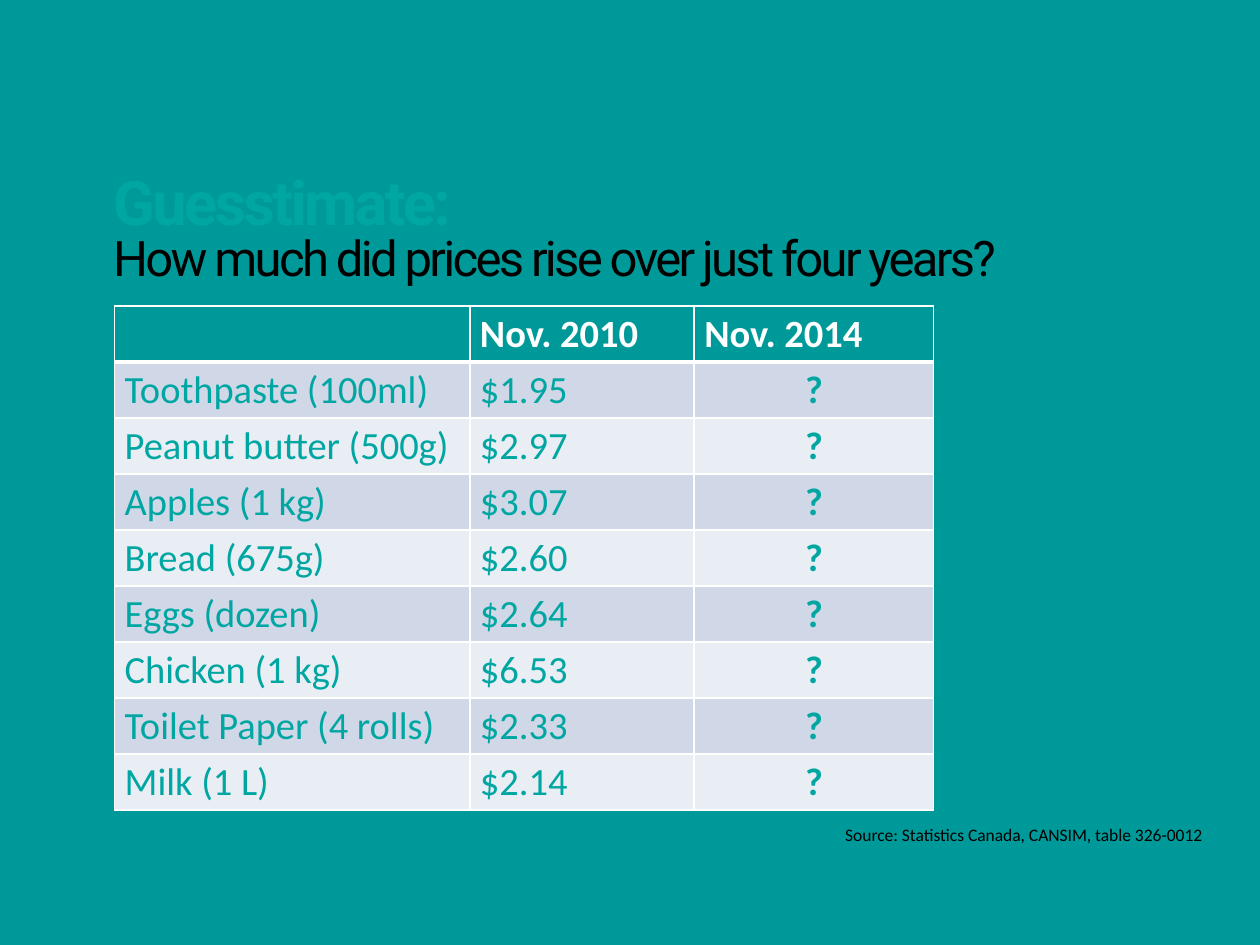
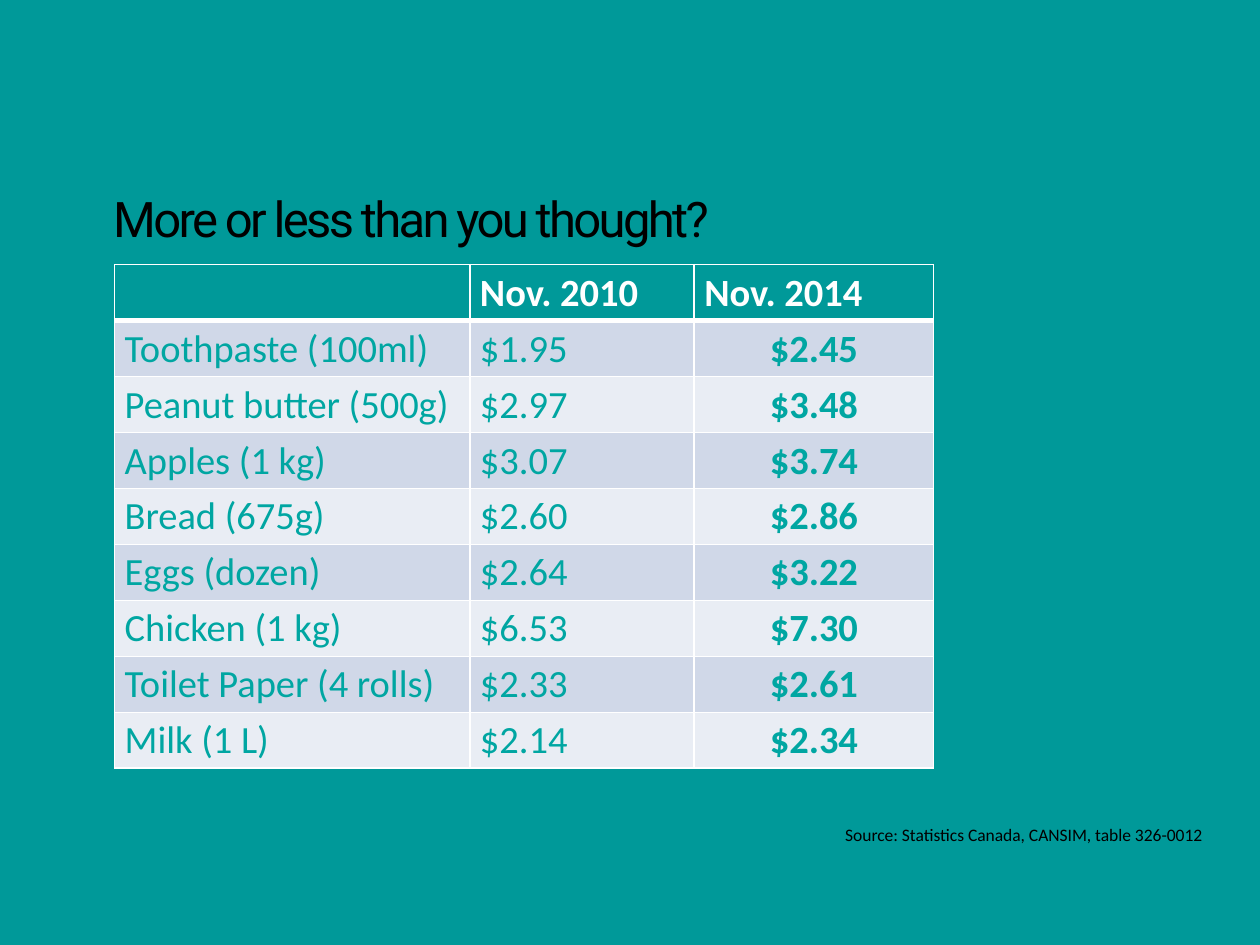
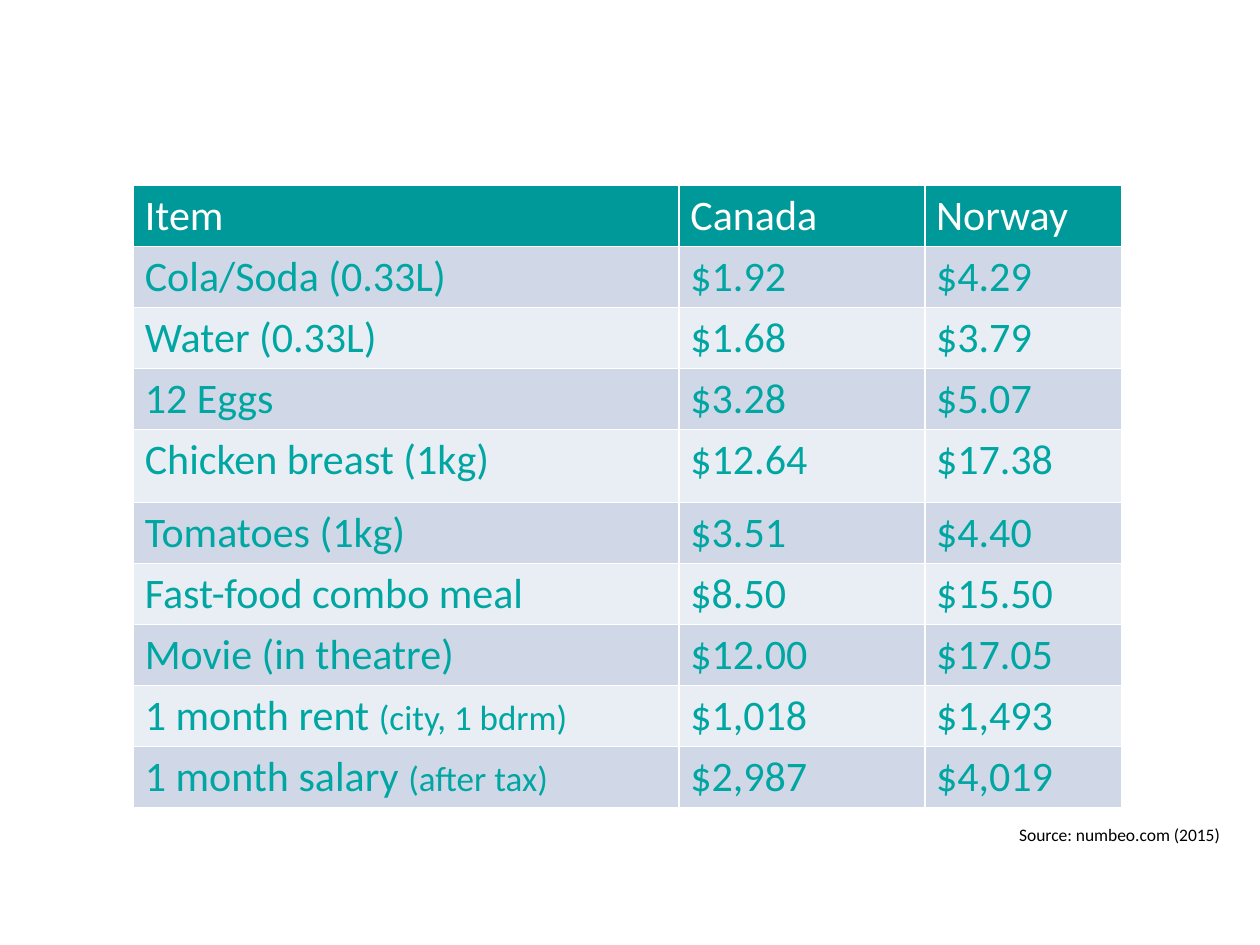
from lxml.etree import SubElement
from pptx import Presentation
from pptx.dml.color import RGBColor
from pptx.enum.text import PP_ALIGN
from pptx.oxml.ns import qn
from pptx.util import Inches, Pt

TEAL, MINT, WHITE, BLACK = "009999", "00A6A2", "FFFFFF", "000000"
BANDS = "D0D8E8", "E9EDF4"

# Content: item, price in 2010, price in 2014
PRICES = [
    ("Toothpaste (100ml)", "$1.95", "$2.45"),
    ("Peanut butter (500g)", "$2.97", "$3.48"),
    ("Apples (1 kg)", "$3.07", "$3.74"),
    ("Bread (675g)", "$2.60", "$2.86"),
    ("Eggs (dozen)", "$2.64", "$3.22"),
    ("Chicken (1 kg)", "$6.53", "$7.30"),
    ("Toilet Paper (4 rolls)", "$2.33", "$2.61"),
    ("Milk (1 L)", "$2.14", "$2.34"),
]
YEARS = ("", "Nov. 2010", "Nov. 2014")
STATS = "Source: Statistics Canada, CANSIM, table 326-0012"

# A pair in the first column is an item and its small remark
NORWAY = [
    ("Item", "Canada", "Norway"),
    ("Cola/Soda (0.33L)", "$1.92", "$4.29"),
    ("Water (0.33L)", "$1.68", "$3.79"),
    ("12 Eggs", "$3.28", "$5.07"),
    ("Chicken breast (1kg)", "$12.64", "$17.38"),
    ("Tomatoes (1kg)", "$3.51", "$4.40"),
    ("Fast-food combo meal", "$8.50", "$15.50"),
    ("Movie (in theatre)", "$12.00", "$17.05"),
    (("1 month rent ", "(city, 1 bdrm)"), "$1,018", "$1,493"),
    (("1 month salary ", "(after tax)"), "$2,987", "$4,019"),
]


def color(code):
    return RGBColor.from_string(code)


def write(frame, text, size=10, ink=BLACK, font="Calibri", bold=False,
          align=PP_ALIGN.LEFT, line=None, track=None, small=20):
    """Fill a text frame; in a pair the second part takes the small size."""
    para = frame.paragraphs[0]
    para.alignment = align
    if line:
        para.line_spacing = Pt(line)
    parts = (text,) if isinstance(text, str) else text
    for part, points in zip(parts, (size, small)):
        if not part:
            continue
        run = para.add_run()
        run.text = part
        run.font.size = Pt(points)
        run.font.name = font
        run.font.bold = bold
        run.font.color.rgb = color(ink)
        if track:
            run._r.get_or_add_rPr().set("spc", str(track))


def add_page(deck, back):
    page = deck.slides.add_slide(deck.slide_layouts[6])
    page.background.fill.solid()
    page.background.fill.fore_color.rgb = color(back)
    return page


def add_text(page, text, left, top, wide, high, **style):
    box = page.shapes.add_textbox(*map(Inches, (left, top, wide, high)))
    box.text_frame.word_wrap = True
    write(box.text_frame, text, **style)


def add_title(page, text, top, wide=7.75, high=0.76, size=28, **style):
    add_text(page, text, 0.8, top, wide, high, size=size, font="Roboto",
             line=32, track=-150, **style)


def add_source(page, text, left):
    add_text(page, text, left, 6.49, 5, 0.27)


def add_edges(cell, top, bottom):
    """White cell borders, widths in points."""
    props = cell._tc.get_or_add_tcPr()
    for side, points in zip("LRTB", (1, 1, top, bottom)):
        edge = SubElement(props, qn("a:ln" + side), w=str(Pt(points)))
        fill = SubElement(edge, qn("a:solidFill"))
        SubElement(fill, qn("a:srgbClr"), val=WHITE)


def add_grid(page, rows, left, top, widths, highs, size, inset,
             rule=1, strong=False):
    """Banded table; strong sets bold heads and a bold, centred last column."""
    grid = page.shapes.add_table(
        len(rows), len(widths), Inches(left), Inches(top),
        Inches(sum(widths)), Inches(sum(highs))).table
    for col, wide in zip(grid.columns, widths):
        col.width = Inches(wide)
    for r, (row, high) in enumerate(zip(rows, highs)):
        grid.rows[r].height = Inches(high)
        for c, text in enumerate(row):
            cell = grid.cell(r, c)
            cell.margin_left = cell.margin_right = Inches(inset)
            cell.margin_top, cell.margin_bottom = Inches(0.04), Inches(0.03)
            add_edges(cell, rule if r == 1 else 1, rule if r == 0 else 1)
            cell.fill.solid()
            cell.fill.fore_color.rgb = color(BANDS[(r - 1) % 2] if r else TEAL)
            last = strong and r > 0 and c == len(row) - 1
            write(cell.text_frame, text, size=size,
                  ink=MINT if r else WHITE,
                  bold=last or (strong and r == 0),
                  align=PP_ALIGN.CENTER if last else PP_ALIGN.LEFT)


def add_prices(page, rows, top):
    add_grid(page, [YEARS] + rows, 0.91, top, (2.82, 1.78, 1.9),
             [4 / 9] * 9, size=22, inset=0.08, rule=3, strong=True)
    add_source(page, STATS, 6.61)


def main():
    deck = Presentation()
    deck.slide_width, deck.slide_height = Inches(10), Inches(7.5)

    # Question
    page = add_page(deck, TEAL)
    add_title(page, "Guesstimate:", 1.39, wide=7.98, high=1.26, size=35,
              ink=MINT, bold=True)
    add_title(page, "How much did prices rise over just four years?", 1.78)
    add_prices(page, [(item, old, "?") for item, old, new in PRICES], 2.43)

    # Answer
    page = add_page(deck, TEAL)
    add_title(page, "More or less than you thought?", 1.47)
    add_prices(page, PRICES, 2.1)

    # Two countries, with a taller row for chicken
    page = add_page(deck, WHITE)
    highs = [(4.94 - 0.58) / 9] * 10
    highs[4] = 0.58
    add_source(page, "Source: numbeo.com (2015)", 7.99)
    add_grid(page, NORWAY, 1.06, 1.47, (4.33, 1.95, 1.56), highs,
             size=24, inset=0.09)

    deck.save("out.pptx")


if __name__ == "__main__":
    main()
